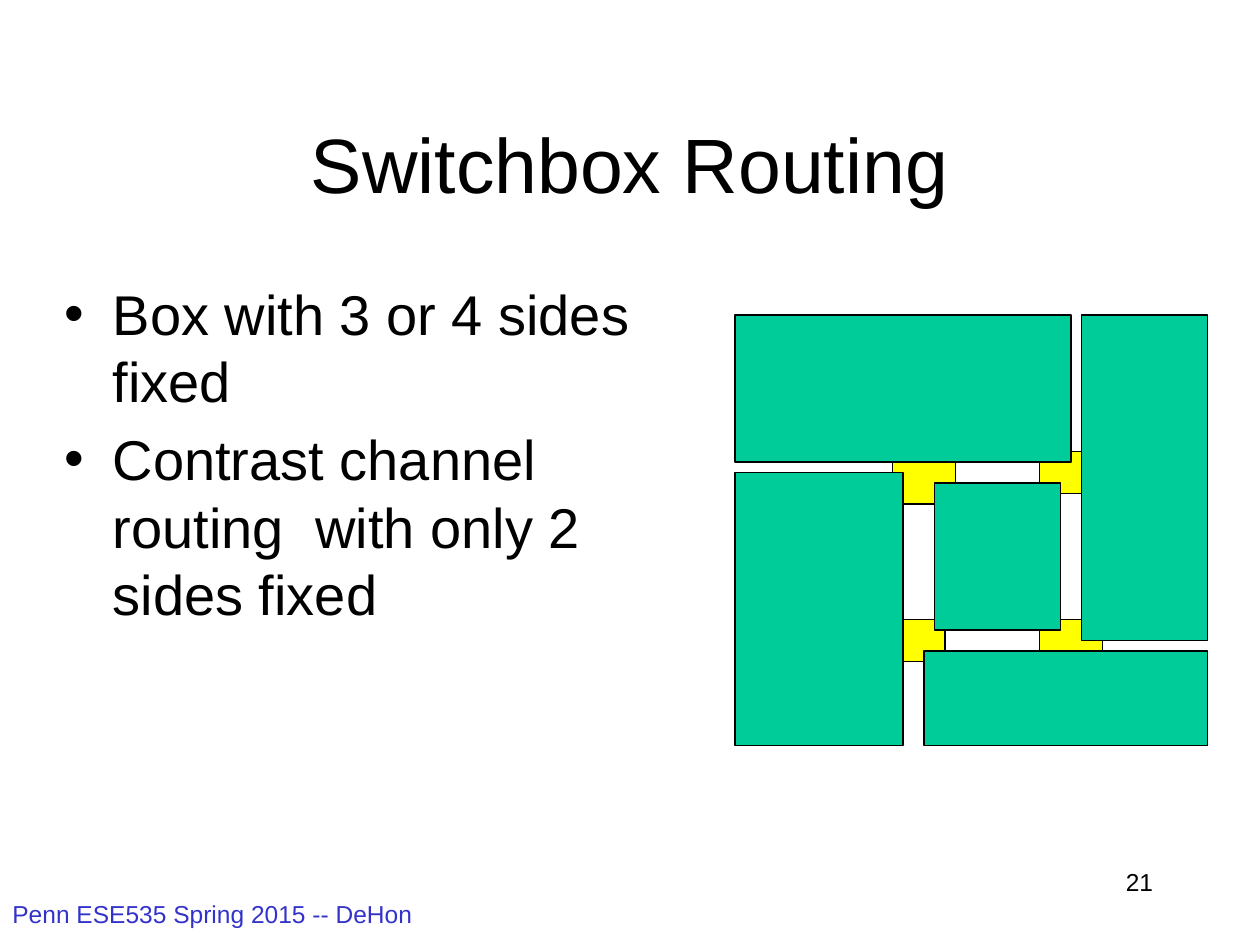
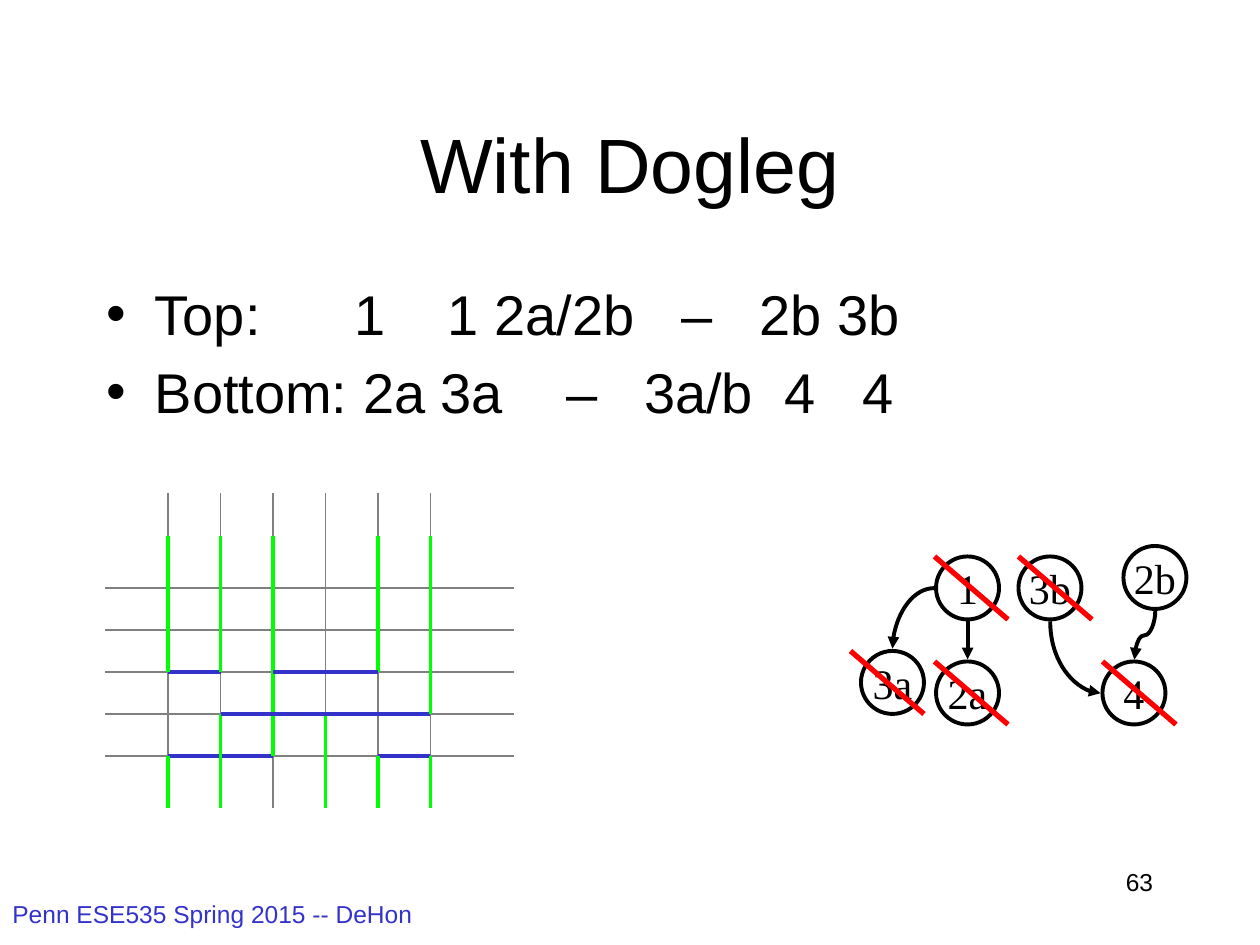
from dataclasses import dataclass
from typing import Any, NamedTuple

from lxml import etree
from pptx import Presentation
from pptx.dml.color import RGBColor
from pptx.enum import shapes, text
from pptx.oxml import ns
from pptx.util import Emu, Inches, Pt

COLS, ROWS = 120, 90
UNIT = Inches(10) // COLS
SPACE = 890


@dataclass(frozen=True)
class Theme:
    sans: str = "Arial"
    serif: str = "Times New Roman"
    ink: str = "000000"
    blue: str = "3333CC"
    green: str = "00FF00"
    teal: str = "00CC99"
    gold: str = "FFFF00"
    grey: str = "808080"
    red: str = "FF0000"
    title: int = 44
    body: int = 32
    label: int = 24
    small: int = 14
    thin: float = 0.75
    bold: float = 2.25
    heavy: float = 3


T = Theme()


class Box(NamedTuple):
    x: float
    y: float
    w: float
    h: float


class Node(NamedTuple):
    name: str
    x: float
    y: float


class Bend(NamedTuple):
    box: Box
    turn: int
    flip: str
    kind: str


class Wire(NamedTuple):
    col: int
    row: int
    to_col: int
    to_row: int


class Style(NamedTuple):
    size: int
    color: str = T.ink
    font: str = T.sans
    align: Any = text.PP_ALIGN.LEFT


HEAD = Style(T.title, align=text.PP_ALIGN.CENTER)
BODY = Style(T.body)
FOOT = Style(T.small, T.blue)
PAGE = Style(T.small, align=text.PP_ALIGN.RIGHT)
MARK = Style(T.label, font=T.serif, align=text.PP_ALIGN.CENTER)

GOLD = [Box(99, 59, 6, 4), Box(84, 59, 6, 4), Box(85, 44, 6, 4), Box(99, 43, 6, 4)]
TEAL = [Box(70, 30, 32, 14), Box(103, 30, 12, 31), Box(70, 45, 16, 26),
        Box(88, 62, 27, 9), Box(89, 46, 12, 14)]

SIDES = [("Box with 3 or 4 sides fixed",),
         ("Contrast channel routing", 2, "with only 2 sides fixed")]
PINS = [("Top:", 6, "1", 4, "1 2a/2b", 3, "–", 3, "2b 3b"),
        ("Bottom: 2a 3a", 4, "–", 3, "3a/b", 2, "4", 3, "4")]

PITCH = [16 + 5 * i for i in range(6)]
TRACKS = [72 - 4 * i for i in range(5)]
TOP, END = 51, 77
WIRES = [
    Wire(4, 72, 5, 72), Wire(4, 72, 4, END), Wire(5, 72, 5, END),
    Wire(0, 72, 2, 72), Wire(0, 72, 0, END), Wire(2, 72, 2, TOP),
    Wire(1, 68, 1, END), Wire(3, 68, 3, END), Wire(1, 68, 3, 68),
    Wire(3, 68, 5, 68), Wire(5, TOP, 5, 68),
    Wire(1, 64, 0, 64), Wire(0, TOP, 0, 64), Wire(1, TOP, 1, 64),
    Wire(4, TOP, 4, 64), Wire(4, 64, 2, 64),
]
NODES = [Node("1", 89.15, 53), Node("3a", 82, 62), Node("2a", 89.15, 63),
         Node("4", 105, 63), Node("3b", 97, 53), Node("2b", 107, 52)]
BENDS = [
    Bend(Box(85, 56, 4, 5.76), 180, "flipV", "curvedConnector2"),
    Bend(Box(106.7, 59.5, 4.65, 2), 90, "", "curvedConnector3"),
    Bend(Box(99, 60.2, 6.85, 4.8), 270, "flipH", "curvedConnector2"),
]
CUTS = [(105, 63), (89, 63), (81, 62), (97, 53), (89, 53)]


def at(n: float) -> Emu:
    return Emu(round(n * UNIT))


def put(item: Any, **fmt: Any) -> None:
    for key, val in fmt.items():
        setattr(item, key, val)


def tag(root: Any, name: str, **attrs: str) -> Any:
    return etree.SubElement(root, ns.qn(name), attrs)


def fill(para: Any, parts: tuple, style: Style) -> None:
    para.alignment = style.align
    for part in parts:
        run = para.add_run()
        gap = isinstance(part, int)
        run.text = " " if gap else part
        put(run.font, size=Pt(style.size), name=style.font)
        run.font.color.rgb = RGBColor.from_string(style.color)
        if gap:
            run.font._element.set("spc", str(SPACE * (part - 1)))


def write(slide: Any, box: Box, lines: list, style: Style,
          anchor: Any = text.MSO_ANCHOR.TOP, bullet: bool = False) -> None:
    frame = slide.shapes.add_textbox(*map(at, box)).text_frame
    put(frame, word_wrap=True, vertical_anchor=anchor)
    for i, parts in enumerate(lines):
        para = frame.add_paragraph() if i else frame.paragraphs[0]
        fill(para, parts, style)
        if bullet:
            para.space_before = Pt(style.size * 0.2)
            props = para._p.get_or_add_pPr()
            dent = Inches(0.38)
            put_xml = {"marL": str(dent), "indent": str(-dent)}
            props.attrib.update(put_xml)
            tag(props, "a:buFont", typeface=T.sans)
            tag(props, "a:buChar", char="•")


def block(slide: Any, kind: Any, box: Box, width: float, color: str = "") -> Any:
    shape = slide.shapes.add_shape(kind, *map(at, box))
    shape.shadow.inherit = False
    if color:
        shape.fill.solid()
        shape.fill.fore_color.rgb = RGBColor.from_string(color)
    else:
        shape.fill.background()
    shape.line.color.rgb = RGBColor.from_string(T.ink)
    shape.line.width = Pt(width)
    return shape


def link(slide: Any, ends: tuple, color: str, width: float,
         arrow: bool = False, kind: Any = shapes.MSO_CONNECTOR.STRAIGHT) -> Any:
    line = slide.shapes.add_connector(kind, *map(at, ends))
    line.line.color.rgb = RGBColor.from_string(color)
    line.line.width = Pt(width)
    if arrow:
        tag(line.line._get_or_add_ln(), "a:tailEnd", type="triangle")
    tag(line._element.spPr, "a:effectLst")
    return line


def curve(slide: Any, bend: Bend) -> None:
    x, y, w, h = bend.box
    line = link(slide, (x, y, x + w, y + h), T.ink, T.bold, True,
                shapes.MSO_CONNECTOR.CURVE)
    props = line._element.spPr
    props.find(ns.qn("a:prstGeom")).set("prst", bend.kind)
    frame = props.find(ns.qn("a:xfrm"))
    frame.set("rot", str(bend.turn * 60000))
    if bend.flip:
        frame.set(bend.flip, "1")


def base(deck: Any, title: str, page: str) -> Any:
    slide = deck.slides.add_slide(deck.slide_layouts[6])
    write(slide, Box(0, 85, 46, 5), [("Penn ESE535 Spring 2015 -- DeHon",)], FOOT)
    write(slide, Box(86, 82, 25, 6), [(page,)], PAGE)
    write(slide, Box(9, 8, 102, 15), [(title,)], HEAD, text.MSO_ANCHOR.MIDDLE)
    return slide


def switch(deck: Any) -> None:
    slide = base(deck, "Switchbox Routing", "21")
    write(slide, Box(5, 26, 65, 54), SIDES, BODY, bullet=True)
    for color, boxes in ((T.gold, GOLD), (T.teal, TEAL)):
        for box in boxes:
            block(slide, shapes.MSO_SHAPE.RECTANGLE, box, T.thin, color)


def dogleg(deck: Any) -> None:
    slide = base(deck, "With Dogleg", "63")
    write(slide, Box(9, 26, 102, 54), PINS, BODY, bullet=True)
    for y in TRACKS:
        link(slide, (10, y, 49, y), T.grey, T.thin)
    for x in PITCH:
        link(slide, (x, 47, x, END), T.grey, T.thin)
    for wire in WIRES:
        color = T.blue if wire.row == wire.to_row else T.green
        ends = (PITCH[wire.col], wire.row, PITCH[wire.to_col], wire.to_row)
        link(slide, ends, color, T.bold)
    for node in NODES:
        ring = block(slide, shapes.MSO_SHAPE.OVAL, Box(node.x, node.y, 6, 6), T.bold)
        frame = ring.text_frame
        put(frame, word_wrap=False, vertical_anchor=text.MSO_ANCHOR.MIDDLE)
        fill(frame.paragraphs[0], (node.name,), MARK)
    link(slide, (92.15, 59.15, 92.15, 62.8), T.ink, T.bold, True)
    for bend in BENDS:
        curve(slide, bend)
    for x, y in CUTS:
        link(slide, (x, y, x + 7, y + 6), T.red, T.heavy)


def main() -> None:
    deck = Presentation()
    put(deck, slide_width=at(COLS), slide_height=at(ROWS))
    switch(deck)
    dogleg(deck)
    deck.save("out.pptx")


if __name__ == "__main__":
    main()
